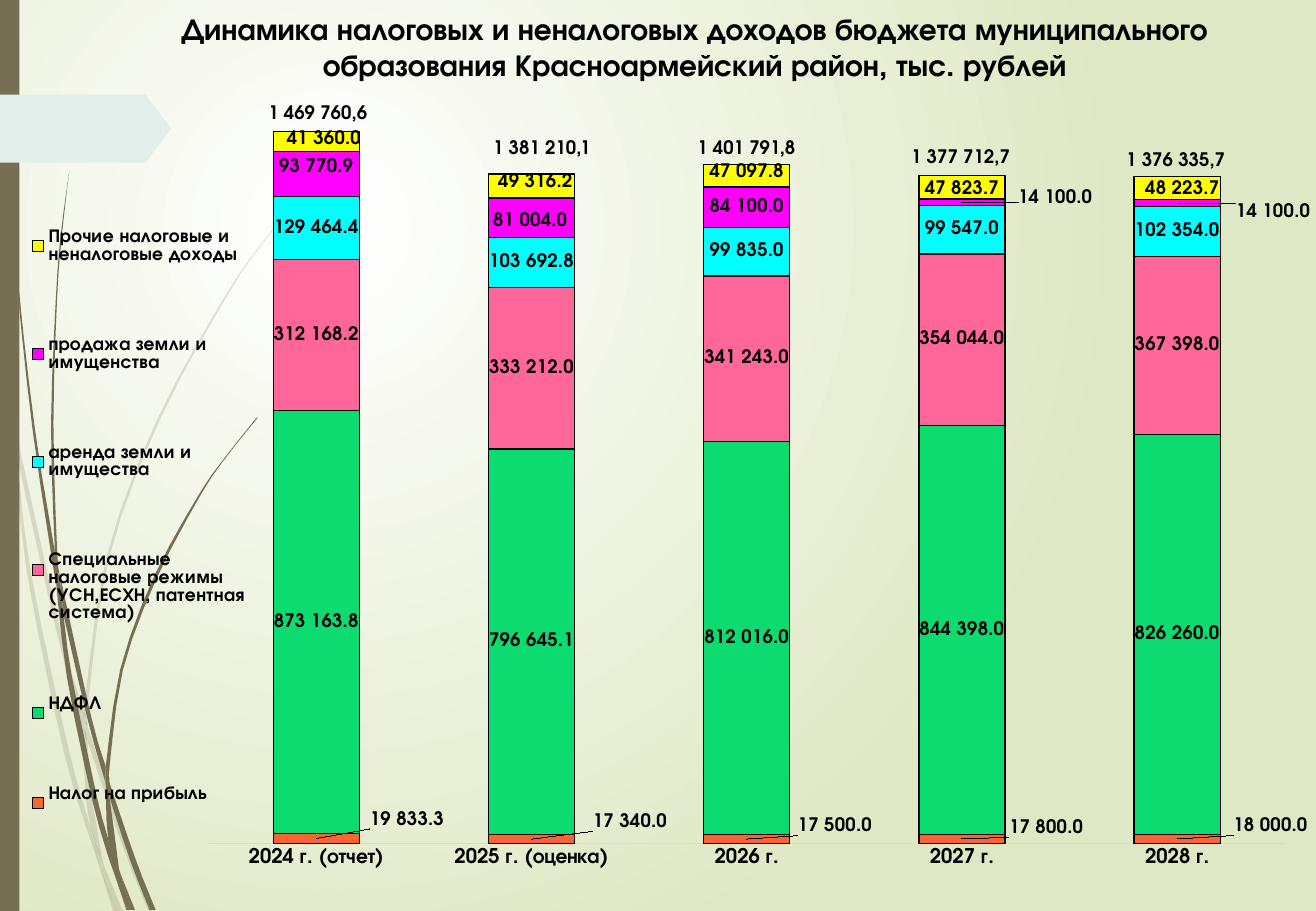
from pptx import Presentation
from pptx.chart.data import CategoryChartData
from pptx.dml.color import RGBColor
from pptx.enum.chart import XL_CHART_TYPE, XL_LEGEND_POSITION, XL_TICK_LABEL_POSITION, XL_TICK_MARK
from pptx.enum.shapes import MSO_SHAPE
from pptx.enum.text import MSO_ANCHOR, MSO_AUTO_SIZE, PP_ALIGN
from pptx.oxml import parse_xml
from pptx.oxml.ns import nsdecls, qn
from pptx.util import Inches, Pt

STACKED = XL_CHART_TYPE.COLUMN_STACKED
LEGEND_LEFT = XL_LEGEND_POSITION.LEFT
BY_AXIS = XL_TICK_LABEL_POSITION.NEXT_TO_AXIS
NO_TICK = XL_TICK_MARK.NONE
RECTANGLE = MSO_SHAPE.RECTANGLE
PENTAGON = MSO_SHAPE.PENTAGON
MIDDLE = MSO_ANCHOR.MIDDLE
CENTER = PP_ALIGN.CENTER
GROW = MSO_AUTO_SIZE.SHAPE_TO_FIT_TEXT
FIXED = MSO_AUTO_SIZE.NONE

BLACK = RGBColor(0x00, 0x00, 0x00)
WHITE = RGBColor(0xFF, 0xFF, 0xFF)
PALE_GREEN = RGBColor(0xDF, 0xE8, 0xC4)
OLIVE = RGBColor(0x76, 0x6F, 0x54)
MINT = RGBColor(0xE1, 0xEE, 0xE9)
AXIS_GREY = RGBColor(0xD9, 0xD9, 0xD9)
ORANGE = RGBColor(0xF9, 0x64, 0x35)
GREEN = RGBColor(0x0C, 0xDC, 0x6F)
PINK = RGBColor(0xFF, 0x66, 0x99)
CYAN = RGBColor(0x00, 0xFF, 0xFF)
MAGENTA = RGBColor(0xFF, 0x00, 0xFF)
YELLOW = RGBColor(0xFF, 0xFF, 0x00)

COLUMNS, ROWS = 1083, 750
TITLE = ("Динамика налоговых и неналоговых доходов бюджета муниципального "
         "образования Красноармейский район, тыс. рублей")
YEARS = ("2024 г. (отчет)", "2025 г. (оценка)", "2026 г.", "2027 г.", "2028 г.")
REVENUES = (
    ("Налог на прибыль", ORANGE, (19833.3, 17340, 17500, 17800, 18000),
     ((7, -2.1), (7.6, -1.9), (6.8, -1.4), (6.5, -1.2), (7.2, -1.4))),
    ("НДФЛ", GREEN, (873163.8, 796645.1, 812016, 844398, 826260), ()),
    ("Специальные налоговые режимы (УСН,ЕСХН, патентная система)", PINK,
     (312168.2, 333212, 341243, 354044, 367398), ()),
    ("аренда земли и имущества", CYAN, (129464.4, 103692.8, 99835, 99547, 102354), ()),
    ("продажа земли и имущенства", MAGENTA, (93770.9, 81004, 84100, 14100, 14100),
     ((0, -0.8), (-0.1, 0.4), (0, 0), (7.2, -0.5), (7.4, 1))),
    ("Прочие налоговые и неналоговые доходы", YELLOW,
     (41360, 49316.2, 47097.8, 47823.7, 48223.7),
     ((0.6, -0.2), (0.3, -0.4), (0, -0.3), (0, 0.2), (0.4, 0.1))),
)
TOTALS = (("1 469 760,6", 211, 78), ("1 381 210,1", 396, 107), ("1 401 791,8", 564, 107),
          ("1 377 712,7", 740, 114), ("1 376 335,7", 917, 117))

FAINT_GRASS = (
    (((9, 350), (7, 322), (0, 282)), ((0, 299), (8, 344))),
    (((11, 345), (50, 520), (69, 586)), ((68, 599), (47, 522), (14, 376))),
    (((72, 596), (75, 607), (103, 692), (126, 750)), ((122, 750), (100, 694), (72, 610))),
    (((85, 711), (101, 750)), ((97, 750),)),
    (((9, 350), (14, 376), (25, 469), (57, 619), (75, 683), (82, 714)),
     ((75, 693), (53, 621), (22, 470), (9, 350))),
    (((68, 599), (70, 646), (75, 683), (85, 711)), ((84, 706), (74, 646), (72, 610), (68, 599))),
    (((72, 596), (72, 584), (89, 462), (130, 349), (186, 245), (218, 198), (253, 154)),
     ((253, 153), (218, 197), (185, 244), (128, 348), (87, 461), (69, 584), (69, 586))),
    (((82, 714), (96, 750)), ((93, 750),)),
    (((68, 599), (69, 586), (72, 596)), ((72, 610), (71, 608))),
    (((76, 683), (82, 714), (96, 750)), ((97, 750), (85, 711), (78, 692))),
)
DARK_GRASS = (
    (((2, 0), (3, 48), (5, 110), (14, 233), (27, 355), (46, 481)),
     ((45, 453), (29, 355), (15, 232), (6, 109), (4, 48), (3, 0))),
    (((49, 472), (75, 590), (87, 631)), ((87, 645), (72, 592), (52, 505))),
    (((89, 641), (111, 706), (128, 749)), ((123, 749), (107, 708), (90, 656))),
    (((46, 477), (52, 505), (59, 556), (80, 657), (89, 691), (95, 722)),
     ((90, 708), (76, 659), (55, 557), (46, 477))),
    (((57, 141), (50, 193), (46, 245), (42, 349), (45, 449), (48, 472)),
     ((49, 472), (47, 453), (44, 349), (47, 245), (51, 193), (57, 141))),
    (((99, 719), (111, 749)), ((108, 749),)),
    (((45, 449), (48, 472), (49, 472)), ((52, 505), (46, 477), (45, 453))),
    (((211, 344), (188, 373), (165, 405), (127, 474), (99, 551), (87, 631)),
     ((90, 641), (90, 633), (101, 552), (129, 476), (166, 406), (188, 374), (212, 344))),
    (((95, 722), (106, 749)), ((104, 749),)),
    (((87, 645), (89, 691), (99, 719)), ((98, 716), (90, 656), (88, 651))),
    (((87, 631), (90, 641), (90, 656)), ((88, 651), (87, 645))),
    (((89, 691), (95, 722), (106, 749)), ((108, 749), (99, 719), (94, 706))),
)


def apply(target, **formats):
    for name, value in formats.items():
        setattr(target, name, value)


def smooth(edge, steps=3):
    guides = (edge[0], *edge, edge[-1])
    curve = [edge[0]]
    for a, b, c, d in zip(guides, guides[1:], guides[2:], guides[3:]):
        for t in (step / steps for step in range(1, steps + 1)):
            curve.append(tuple(
                q + t * (r - p) / 2 + t * t * (p - 2.5 * q + 2 * r - s / 2)
                + t ** 3 * (1.5 * (q - r) + (s - p) / 2)
                for p, q, r, s in zip(a, b, c, d)))
    return curve


def arrange(parent, index, modes="", **percents):
    for layout in parent.findall(qn("c:layout")):
        parent.remove(layout)
    values = "".join(f'<c:{key} val="{value / 100:.4f}"/>' for key, value in percents.items())
    parent.insert(index, parse_xml(
        f'<c:layout {nsdecls("c")}><c:manualLayout>{modes}{values}</c:manualLayout></c:layout>'))


class BudgetSlide:
    """Holds the slide, its grid and its text style, and adds each kind of element."""

    font = {"name": "TeX Gyre Adventor", "bold": True}
    number_format = "#\\ ##0.0"
    edge_modes = '<c:xMode val="edge"/><c:yMode val="edge"/>'

    def __init__(self, deck):
        self.cell = deck.slide_width / COLUMNS
        self.slide = deck.slides.add_slide(deck.slide_layouts[5])

    def grid(self, *cells):
        return [round(count * self.cell) for count in cells]

    def style(self, font, size):
        apply(font, size=Pt(size), **self.font)
        font.color.rgb = BLACK

    def paint(self, shape, color):
        shape.shadow.inherit = False
        shape.fill.solid()
        shape.fill.fore_color.rgb = color
        shape.line.fill.background()

    def background(self):
        fill = self.slide.background.fill
        fill.gradient()
        for stop, color, position in zip(fill.gradient_stops, (WHITE, PALE_GREEN), (0, 1)):
            stop.color.rgb = color
            stop.position = position
        linear = self.slide.background._cSld.find(".//" + qn("a:lin"))
        linear.getparent().replace(linear, parse_xml(
            f'<a:path {nsdecls("a")} path="circle"><a:fillToRect l="50000" t="50000" '
            'r="100000" b="100000"/></a:path>'))

    def title(self, text, cells):
        heading = self.slide.shapes.title
        apply(heading, **dict(zip(("left", "top", "width", "height"), self.grid(*cells))))
        apply(heading.text_frame, text=text, word_wrap=True, auto_size=FIXED,
              vertical_anchor=MIDDLE, margin_top=0, margin_bottom=0)
        paragraph = heading.text_frame.paragraphs[0]
        apply(paragraph, alignment=CENTER, line_spacing=1.0)
        self.style(paragraph.runs[0].font, 18)

    def grass(self, blades, opacity=100):
        group = self.slide.shapes.add_group_shape()
        for rising, falling in blades:
            outline = [self.grid(*point) for point in smooth(rising) + smooth(falling)]
            builder = group.shapes.build_freeform(*outline[0])
            builder.add_line_segments(outline[1:], close=True)
            blade = builder.convert_to_shape()
            self.paint(blade, OLIVE)
            blade._element.spPr.find(".//" + qn("a:srgbClr")).append(
                parse_xml(f'<a:alpha {nsdecls("a")} val="{opacity * 1000}"/>'))

    def block(self, kind, cells, color):
        shape = self.slide.shapes.add_shape(kind, *self.grid(*cells))
        self.paint(shape, color)
        return shape

    def total(self, amount, column, row):
        frame = self.slide.shapes.add_textbox(*self.grid(column, row, 107, 29)).text_frame
        apply(frame, text=amount, word_wrap=True, auto_size=GROW)
        self.style(frame.paragraphs[0].runs[0].font, 11)

    def chart(self, cells):
        data = CategoryChartData(number_format=self.number_format)
        data.categories = YEARS
        for name, _, amounts, _ in REVENUES:
            data.add_series(name, amounts)
        chart = self.slide.shapes.add_chart(STACKED, *self.grid(*cells), data).chart
        self.style(chart.font, 10)
        apply(chart, has_title=False, has_legend=True)
        apply(chart.legend, position=LEGEND_LEFT, include_in_layout=False)
        self.style(chart.legend.font, 11)
        arrange(chart.legend._element, 1, self.edge_modes, x=0.2, y=16.3, w=18, h=82)
        self.axes(chart)
        plot = chart.plots[0]
        apply(plot, gap_width=150, overlap=100, vary_by_categories=False)
        for series, (_, color, _, shifts) in zip(plot.series, REVENUES):
            self.revenue(series, color, shifts)
        area = chart._chartSpace.find(".//" + qn("c:plotArea"))
        arrange(area, 0, '<c:layoutTarget val="inner"/>' + self.edge_modes,
                x=14.6, y=6.25, w=83, h=88.4)
        clear = f'<c:spPr {nsdecls("c", "a")}><a:noFill/><a:ln><a:noFill/></a:ln></c:spPr>'
        area.append(parse_xml(clear))
        chart._chartSpace.find(qn("c:txPr")).addprevious(parse_xml(clear))

    def axes(self, chart):
        apply(chart.value_axis, visible=False, has_major_gridlines=False,
              minimum_scale=0, maximum_scale=1600000)
        years = chart.category_axis
        apply(years, major_tick_mark=NO_TICK, minor_tick_mark=NO_TICK,
              tick_label_position=BY_AXIS)
        self.style(years.tick_labels.font, 12)
        years.format.line.color.rgb = AXIS_GREY
        years.format.line.width = Pt(0.75)

    def revenue(self, series, color, shifts):
        series.format.fill.solid()
        series.format.fill.fore_color.rgb = color
        series.format.line.color.rgb = BLACK
        series.format.line.width = Pt(0.75)
        labels = series.data_labels
        apply(labels, show_value=True, number_format=self.number_format,
              number_format_is_linked=False)
        self.style(labels.font, 11)
        for index, (x, y) in enumerate(shifts):
            self.style(series.points[index].data_label.font, 11)
            arrange(labels._element.findall(qn("c:dLbl"))[index], 1, x=x, y=y)
        labels._element.append(parse_xml(
            f'<c:extLst {nsdecls("c")}><c:ext uri="{{CE6537A1-D6FC-4f65-9D91-7224C49458BB}}" '
            'xmlns:c15="http://schemas.microsoft.com/office/drawing/2012/chart">'
            '<c15:showLeaderLines val="0"/></c:ext></c:extLst>'))


def main():
    deck = Presentation()
    apply(deck, slide_width=Inches(10.83), slide_height=Inches(7.5))
    budget = BudgetSlide(deck)
    budget.background()
    budget.title(TITLE, (122, 15, 900, 46))
    budget.grass(FAINT_GRASS, opacity=20)
    budget.grass(DARK_GRASS)
    budget.block(RECTANGLE, (0, 0, 16, ROWS), OLIVE)
    budget.block(PENTAGON, (0, 78, 141, 56), MINT).adjustments[0] = 0.38
    budget.chart((16, 11, 1067, 722))
    for total in TOTALS:
        budget.total(*total)
    deck.save("out.pptx")


if __name__ == "__main__":
    main()
